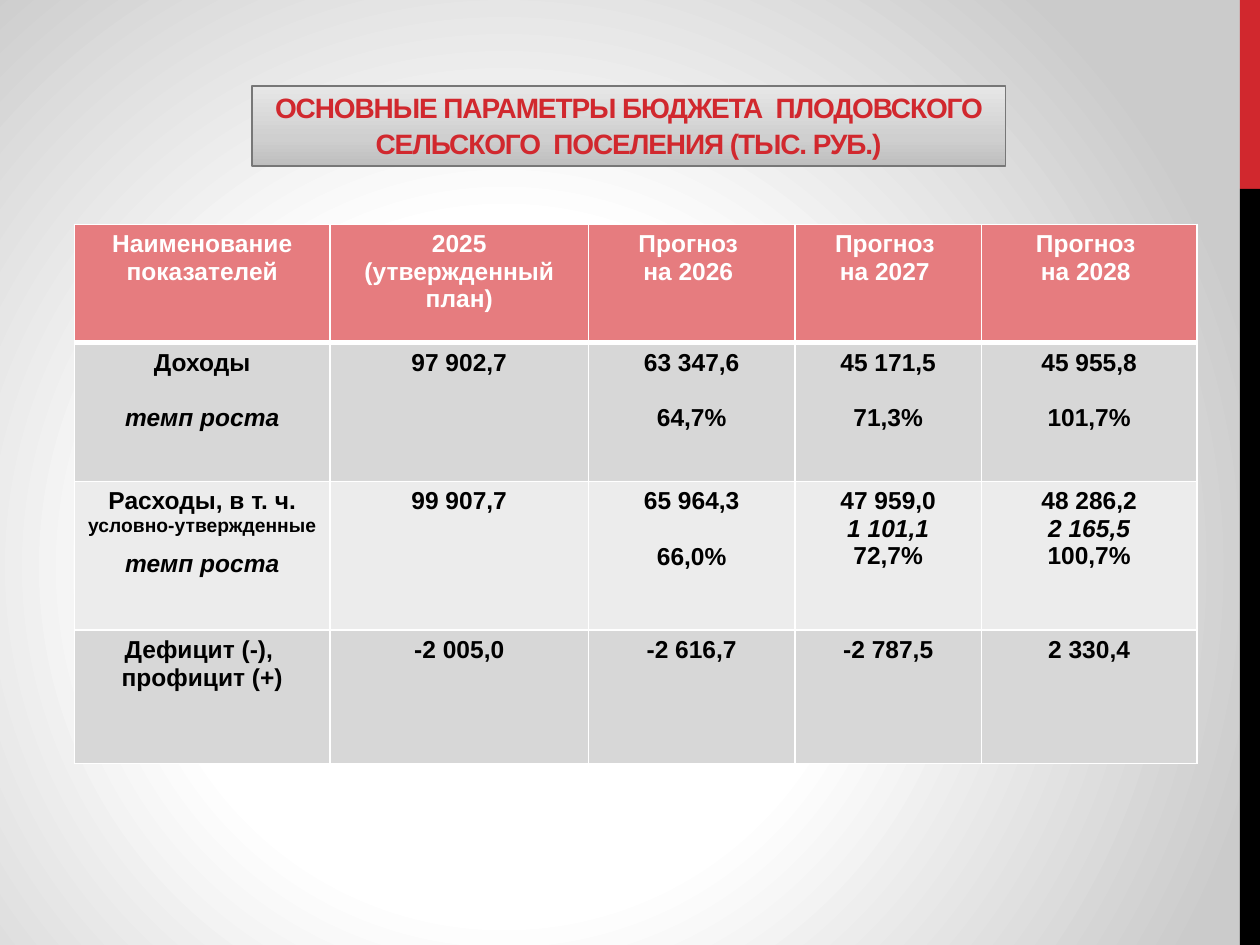
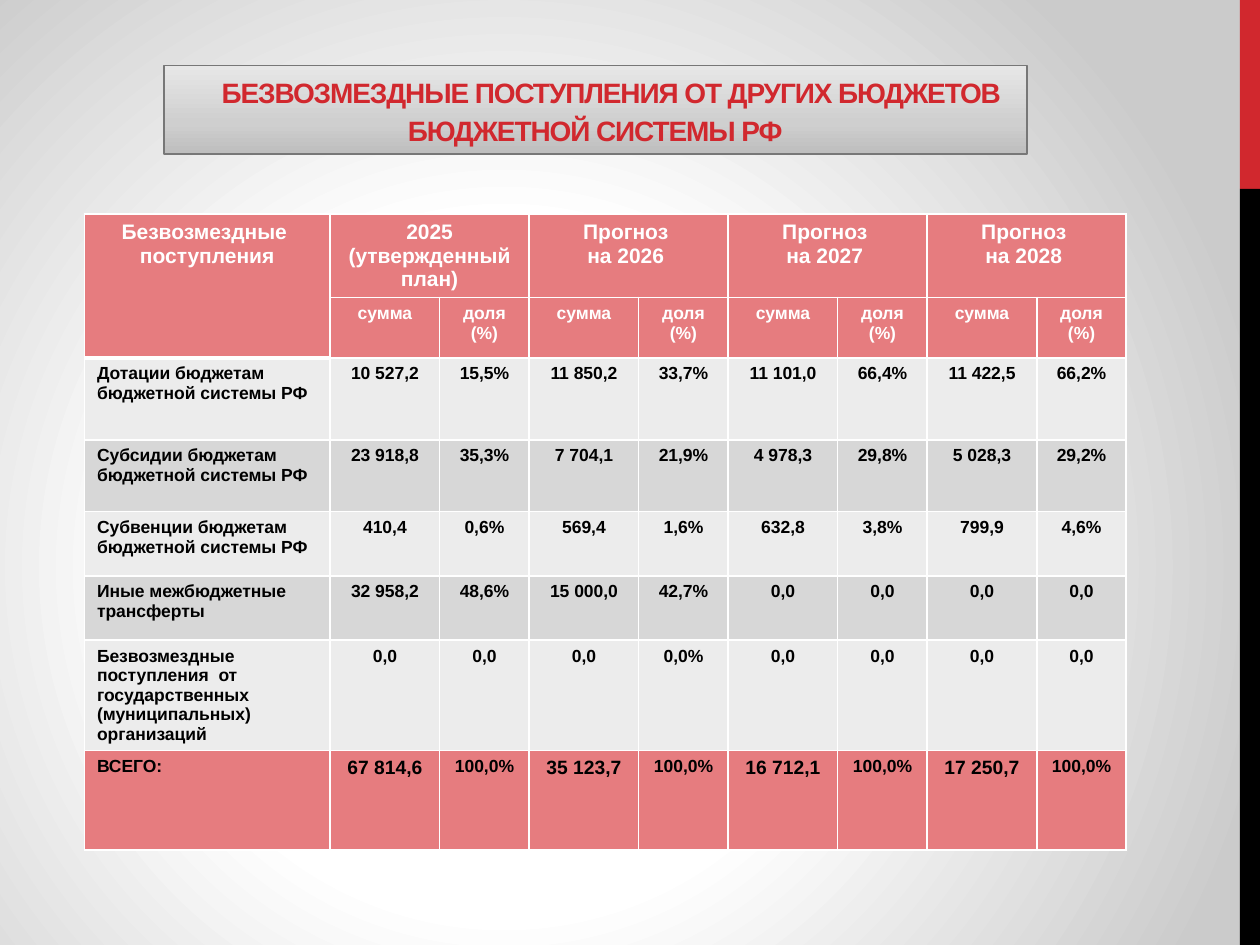
from lxml import etree
from pptx import Presentation
from pptx.dml.color import RGBColor
from pptx.enum.shapes import MSO_SHAPE
from pptx.enum.text import MSO_ANCHOR, MSO_AUTO_SIZE, PP_ALIGN
from pptx.oxml.ns import qn
from pptx.util import Inches, Pt

RECT = MSO_SHAPE.RECTANGLE
BOTTOM = MSO_ANCHOR.BOTTOM
FIXED = MSO_AUTO_SIZE.NONE
CENTER, LEFT = PP_ALIGN.CENTER, PP_ALIGN.LEFT

FONT = "Arial"
RED, BLACK, WHITE = "D1282E", "000000", "FFFFFF"
ROSE, GREY, PALE, EDGE = "E67C7F", "D7D7D7", "ECECEC", "777777"
BACK = [(0, WHITE), (44, WHITE), (100, "CBCBCB")]
PLATE = [(0, "BEBEBE"), (35, "CFCFCF"), (100, "E7E7E7")]


def rgb(code):
    return RGBColor.from_string(code)


def inches(values):
    return [Inches(v) for v in values]


def sub(parent, tag, **attrs):
    node = etree.SubElement(parent, qn(tag))
    for name, value in attrs.items():
        node.set(name, str(value))
    return node


def blend(fill, root, stops, angle=None):
    """Gradient fill: linear at an angle, otherwise circular."""
    fill.gradient()
    grad = root.find(".//" + qn("a:gradFill"))
    for child in list(grad):
        grad.remove(child)
    steps = sub(grad, "a:gsLst")
    for pos, code in stops:
        sub(sub(steps, "a:gs", pos=pos * 1000), "a:srgbClr", val=code)
    if angle is not None:
        sub(grad, "a:lin", ang=angle * 60000, scaled=0)
    else:
        ring = sub(grad, "a:path", path="circle")
        sub(ring, "a:fillToRect", l=40000, t=60000, r=60000, b=40000)


def style(font, size, color, **flags):
    font.size = Pt(size)
    font.color.rgb = rgb(color)
    for name, value in {"name": FONT, "bold": True, **flags}.items():
        setattr(font, name, value)


def bands(slide):
    """Red and black strip along the right edge."""
    for top, high, color in [(0, 1.5, RED), (1.5, 6, BLACK)]:
        bar = slide.shapes.add_shape(RECT, *inches((9.84, top, 0.16, high)))
        bar.shadow.inherit = False
        bar.fill.solid()
        bar.fill.fore_color.rgb = rgb(color)
        bar.line.fill.background()


def title(slide, box, text, pitch, indent=0):
    """Title on a grey plate."""
    plate = slide.shapes.title
    plate.left, plate.top, plate.width, plate.height = inches(box)
    blend(plate.fill, plate.element, PLATE, 270)
    plate.line.color.rgb = rgb(EDGE)
    plate.line.width = Pt(1)
    frame = plate.text_frame
    looks = {"word_wrap": True, "auto_size": FIXED, "vertical_anchor": BOTTOM}
    for name, value in looks.items():
        setattr(frame, name, value)
    para = frame.paragraphs[0]
    para.alignment, para.line_spacing = CENTER, pitch
    para._p.get_or_add_pPr().set("indent", str(Inches(indent)))
    run = para.add_run()
    run.text = text
    style(run.font, 16, RED)
    run._r.get_or_add_rPr().set("spc", "-60")


def border(cell, heavy):
    """White edges; the sides named in heavy are 3 pt."""
    props = cell._tc.get_or_add_tcPr()
    for side in "LRTB":
        line = sub(props, "a:ln" + side, w=Pt(3 if side in heavy else 1))
        sub(sub(line, "a:solidFill"), "a:srgbClr", val=WHITE)


def write(cell, paras, size, color, align):
    """Paragraphs are strings or (text, changes) pairs."""
    frame = cell.text_frame
    for i, item in enumerate(paras):
        text, more = (item, {}) if isinstance(item, str) else item
        para = frame.paragraphs[0] if i == 0 else frame.add_paragraph()
        para.alignment = align
        if "gap" in more:
            para.space_before = Pt(more["gap"])
        run = para.add_run()
        run.text = text
        style(run.font, more.get("size", size), color,
              italic=more.get("italic", False))


def grid(slide, box, cols, rows, data, look, heavy, spans=()):
    """Table; look(r, c) gives fill, size, colour and alignment."""
    shape = slide.shapes.add_table(len(rows), len(cols), *inches(
        (*box, sum(cols), sum(rows))))
    table = shape.table
    table.first_row = table.horz_banding = False
    for col, wide in zip(table.columns, cols):
        col.width = Inches(wide)
    for row, high in zip(table.rows, rows):
        row.height = Inches(high)
    for r, line in enumerate(data):
        for c, paras in enumerate(line):
            cell = table.cell(r, c)
            fill, *text = look(r, c)
            border(cell, heavy(r, c))
            cell.fill.solid()
            cell.fill.fore_color.rgb = rgb(fill)
            if paras:
                write(cell, [paras] if isinstance(paras, str) else paras,
                      *text)
    for first, last in spans:
        table.cell(*first).merge(table.cell(*last))


PLAN = ["2025", "(утвержденный план)"]
YEARS = [["Прогноз ", f"на {year} "] for year in (2026, 2027, 2028)]


def rate(text, gap=16, **more):
    return text, {"gap": gap, **more}


def budget(slide):
    """Main budget figures."""
    title(slide, (2, 0.68, 5.98, 0.64),
          "ОСНОВНЫЕ ПАРАМЕТРЫ БЮДЖЕТА  ПЛОДОВСКОГО "
          "СЕЛЬСКОГО  ПОСЕЛЕНИЯ (ТЫС. РУБ.)", 1.06)
    slant = {"italic": True}
    data = [
        ["Наименование показателей", PLAN, *YEARS],
        [["Доходы", rate("темп роста", italic=True)], "97 902,7",
         ["63 347,6", rate("64,7%")], ["45 171,5", rate("71,3%")],
         ["45 955,8", rate("101,7%")]],
        [["Расходы, в т. ч.", ("условно-утвержденные", {"size": 11}),
          rate("темп роста", 8, italic=True)], "99 907,7",
         ["65 964,3", rate("66,0%")],
         ["47 959,0", ("1 101,1", slant), "72,7%"],
         ["48 286,2", ("2 165,5", slant), "100,7%"]],
        ["Дефицит (-),  профицит (+)", "-2 005,0", "-2 616,7", "-2 787,5",
         "2 330,4"],
    ]
    fills = [ROSE, GREY, PALE, GREY]

    def look(r, c):
        return fills[r], 14, BLACK if r else WHITE, CENTER

    def heavy(r, c):
        return {0: "B", 1: "T"}.get(r, "")

    grid(slide, (0.59, 1.78), [2.03, 2.05, 1.64, 1.48, 1.71],
         [0.94, 1.1, 1.18, 1.06], data, look, heavy)


def grants(slide):
    """Transfers from other budgets."""
    title(slide, (1.3, 0.52, 6.85, 0.7),
          "БЕЗВОЗМЕЗДНЫЕ ПОСТУПЛЕНИЯ ОТ ДРУГИХ БЮДЖЕТОВ "
          "БЮДЖЕТНОЙ СИСТЕМЫ РФ", 1.15, 0.25)
    head = ["Безвозмездные  поступления"]
    for label in [PLAN, *YEARS]:
        head += [label, None]
    data = [
        head,
        [None, "сумма", "доля (%)"] + ["сумма", ["доля", "(%)"]] * 3,
        ["Дотации бюджетам бюджетной системы РФ", "10 527,2", "15,5%",
         "11 850,2", "33,7%", "11 101,0", "66,4%", "11 422,5", "66,2%"],
        ["Субсидии бюджетам бюджетной системы РФ", "23 918,8", "35,3%",
         "7 704,1", "21,9%", "4 978,3", "29,8%", "5 028,3", "29,2%"],
        ["Субвенции бюджетам бюджетной системы РФ", "410,4", "0,6%",
         "569,4", "1,6%", "632,8", "3,8%", "799,9", "4,6%"],
        ["Иные межбюджетные трансферты", "32 958,2", "48,6%",
         "15 000,0", "42,7%"] + ["0,0"] * 4,
        ["Безвозмездные поступления  от государственных (муниципальных) "
         "организаций", "0,0", "0,0", "0,0", "0,0%"] + ["0,0"] * 4,
        ["ВСЕГО:", "67 814,6", "100,0%", "35 123,7", "100,0%",
         "16 712,1", "100,0%", "17 250,7", "100,0%"],
    ]
    total = len(data) - 1

    def look(r, c):
        fill = ROSE if r in (0, 1, total) else (PALE, GREY)[r % 2]
        size = 12 if r == 0 else 11 if r == total and c % 2 else 10
        align = LEFT if r > 1 and c == 0 else CENTER
        return fill, size, BLACK if r > 1 else WHITE, align

    def heavy(r, c):
        return "" if c else {0: "B", 1: "B", 2: "T"}.get(r, "")

    spans = [((0, 0), (1, 0))] + [((0, c), (0, c + 1)) for c in (1, 3, 5, 7)]
    grid(slide, (0.67, 1.7), [1.95] + [0.87, 0.71] * 4,
         [0.66, 0.48, 0.65, 0.57, 0.51, 0.51, 0.87, 0.79],
         data, look, heavy, spans)


def main():
    prs = Presentation()
    prs.slide_width, prs.slide_height = Inches(10), Inches(7.5)
    master = prs.slide_master
    blend(master.background.fill, master.element, BACK)
    for build in (budget, grants):
        slide = prs.slides.add_slide(prs.slide_layouts.get_by_name("Title Only"))
        bands(slide)
        build(slide)
    prs.save("out.pptx")


if __name__ == "__main__":
    main()
